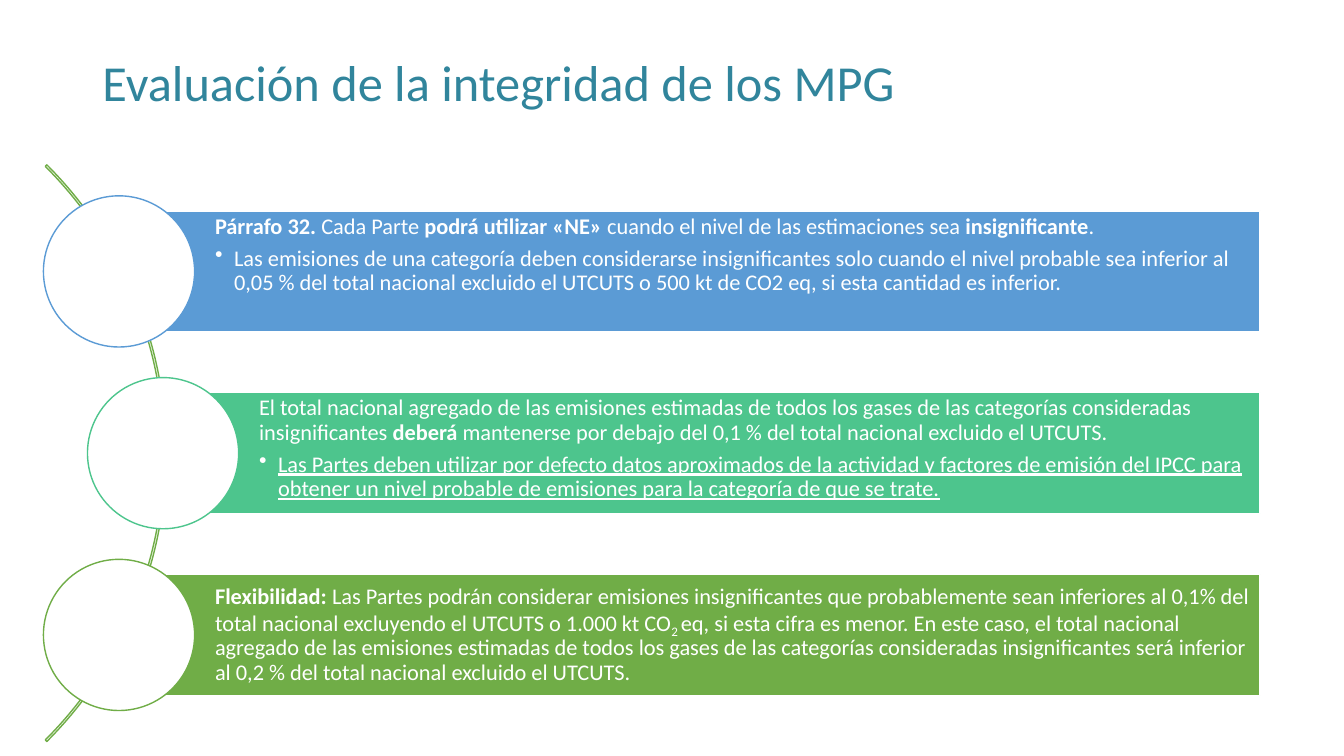
"""Build the slide on assessing the completeness of the MPG."""
from dataclasses import dataclass

from lxml import etree
from pptx import Presentation
from pptx.dml.color import RGBColor
from pptx.enum.shapes import MSO_SHAPE
from pptx.enum.text import MSO_ANCHOR, MSO_AUTO_SIZE, PP_ALIGN
from pptx.oxml.ns import qn
from pptx.util import Cm, Pt

ARC, BAR, CIRCLE = MSO_SHAPE.BLOCK_ARC, MSO_SHAPE.RECTANGLE, MSO_SHAPE.OVAL
TOP, MIDDLE = MSO_ANCHOR.TOP, MSO_ANCHOR.MIDDLE
LEFT = PP_ALIGN.LEFT
FIXED = MSO_AUTO_SIZE.NONE


@dataclass(frozen=True)
class Theme:
    font: str = "Calibri"
    title_size: float = 36
    body_size: float = 16
    line_width: float = 1
    line_spacing: float = 0.9
    title: str = "31859C"
    white: str = "FFFFFF"
    blue: str = "5B9BD5"
    teal: str = "4DC58D"
    green: str = "70AD47"


THEME = Theme()
BOLD = {"bold": True}
UNDERLINED = {"underline": True}
SUBSCRIPT = {"baseline": -25000}

TITLE = "Evaluación de la integridad de los MPG"
PROVISIONS = [
    {
        "color": THEME.blue, "left": 3.0, "anchor": TOP,
        "statement": [
            ("Párrafo 32. ", BOLD),
            ("Cada Parte ", {}),
            ("podrá utilizar «NE» ", BOLD),
            ("cuando el nivel de las estimaciones sea ", {}),
            ("insignificante", BOLD),
            (".", {}),
        ],
        "detail": [
            ("Las emisiones de una categoría deben considerarse insignificantes solo cuando "
             "el nivel probable sea inferior al 0,05 % del total nacional excluido el UTCUTS "
             "o 500 kt de CO2 eq, si esta cantidad es inferior.", {}),
        ],
    },
    {
        "color": THEME.teal, "left": 4.11, "anchor": TOP,
        "statement": [
            ("El total nacional agregado de las emisiones estimadas de todos los gases de las "
             "categorías consideradas insignificantes ", {}),
            ("deberá", BOLD),
            (" mantenerse por debajo del 0,1 % del total nacional excluido el UTCUTS.", {}),
        ],
        "detail": [
            ("Las Partes deben utilizar por defecto datos aproximados de la actividad y "
             "factores de emisión del IPCC para obtener un nivel probable de emisiones para "
             "la categoría de que se trate.", UNDERLINED),
        ],
    },
    {
        "color": THEME.green, "left": 3.0, "anchor": MIDDLE,
        "statement": [
            ("Flexibilidad: ", BOLD),
            ("Las Partes podrán considerar emisiones insignificantes que probablemente sean "
             "inferiores al 0,1% del total nacional excluyendo el UTCUTS o 1.000 kt CO", {}),
            ("2 ", SUBSCRIPT),
            ("eq, si esta cifra es menor. En este caso, el total nacional agregado de las "
             "emisiones estimadas de todos los gases de las categorías consideradas "
             "insignificantes será inferior al 0,2 % del total nacional excluido el UTCUTS.", {}),
        ],
        "detail": [],
    },
]

SLIDE_WIDTH, SLIDE_HEIGHT = 33.87, 19.05
MIDDLE_Y, ROW_PITCH = 11.42, 4.58
BAR_RIGHT, BAR_HEIGHT = 31.76, 3.05
CIRCLE_SIZE = 3.81
ARC_LEFT, ARC_SIZE = -16.36, 20.55
BULLET_INDENT = 0.48


def add_text(paragraph, text, size=THEME.body_size, color=THEME.white,
             bold=False, underline=False, baseline=0):
    """Append a formatted run to a paragraph."""
    run = paragraph.add_run()
    run.text = text
    run.font.name, run.font.size = THEME.font, Pt(size)
    run.font.bold, run.font.underline = bold, underline
    run.font.color.rgb = RGBColor.from_string(color)
    if baseline:
        run.font._element.set("baseline", str(baseline))


def add_figure(slide, preset, left, center_y, width, height, line, fill=None):
    """Add an outlined shape centred on a height, in centimetres."""
    figure = slide.shapes.add_shape(
        preset, Cm(left), Cm(center_y - height / 2), Cm(width), Cm(height))
    figure.shadow.inherit = False
    figure.line.color.rgb = RGBColor.from_string(line)
    figure.line.width = Pt(THEME.line_width)
    if fill:
        figure.fill.solid()
        figure.fill.fore_color.rgb = RGBColor.from_string(fill)
    else:
        figure.fill.background()
    return figure


def set_frame(frame, anchor, left, top, right, bottom):
    """Set the anchor and the insets of a text frame."""
    frame.word_wrap, frame.auto_size = True, FIXED
    frame.vertical_anchor = anchor
    frame.margin_left, frame.margin_top = Cm(left), Cm(top)
    frame.margin_right, frame.margin_bottom = Cm(right), Cm(bottom)


def write_paragraph(paragraph, parts, after=0, bullet=False):
    """Fill a paragraph with runs, bulleted if asked."""
    paragraph.alignment = LEFT
    paragraph.line_spacing = THEME.line_spacing
    paragraph.space_before, paragraph.space_after = Pt(0), Pt(after)
    if bullet:
        paragraph.level = 1
        properties = paragraph._p.get_or_add_pPr()
        properties.set("marL", str(Cm(BULLET_INDENT)))
        properties.set("indent", str(-Cm(BULLET_INDENT)))
        etree.SubElement(properties, qn("a:buChar")).set("char", "•")
    for text, style in parts:
        add_text(paragraph, text, **style)


def add_title(slide):
    """Place and fill the title."""
    title = slide.shapes.title
    title.left, title.top = Cm(2.33), Cm(1.01)
    title.width, title.height = Cm(29.21), Cm(3.68)
    set_frame(title.text_frame, TOP, 0.25, 0.45, 0.25, 0.13)
    style = {"size": THEME.title_size, "color": THEME.title}
    write_paragraph(title.text_frame.paragraphs[0], [(TITLE, style)])


def add_provision(slide, provision, center_y):
    """Add a text bar with the circle on its left edge."""
    left, color = provision["left"], provision["color"]
    bar = add_figure(slide, BAR, left, center_y, BAR_RIGHT - left, BAR_HEIGHT,
                     THEME.white, color)
    frame = bar.text_frame
    set_frame(frame, provision["anchor"], 2.42, 0.1, 0.1, 0.1)
    write_paragraph(frame.paragraphs[0], provision["statement"],
                    after=0.35 * THEME.body_size)
    if provision["detail"]:
        write_paragraph(frame.add_paragraph(), provision["detail"],
                        after=0.15 * THEME.body_size, bullet=True)
    add_figure(slide, CIRCLE, left - CIRCLE_SIZE / 2, center_y, CIRCLE_SIZE, CIRCLE_SIZE,
               color, THEME.white)


def main():
    """Build and save the slide."""
    deck = Presentation()
    deck.slide_width, deck.slide_height = Cm(SLIDE_WIDTH), Cm(SLIDE_HEIGHT)
    slide = deck.slides.add_slide(deck.slide_layouts[5])
    add_title(slide)
    arc = add_figure(slide, ARC, ARC_LEFT, MIDDLE_Y, ARC_SIZE, ARC_SIZE, THEME.green)
    for index, value in enumerate((189, 27, 0.00267)):
        arc.adjustments[index] = value
    for row, provision in enumerate(PROVISIONS):
        offset = row - (len(PROVISIONS) - 1) / 2
        add_provision(slide, provision, MIDDLE_Y + offset * ROW_PITCH)
    deck.save("out.pptx")


if __name__ == "__main__":
    main()
